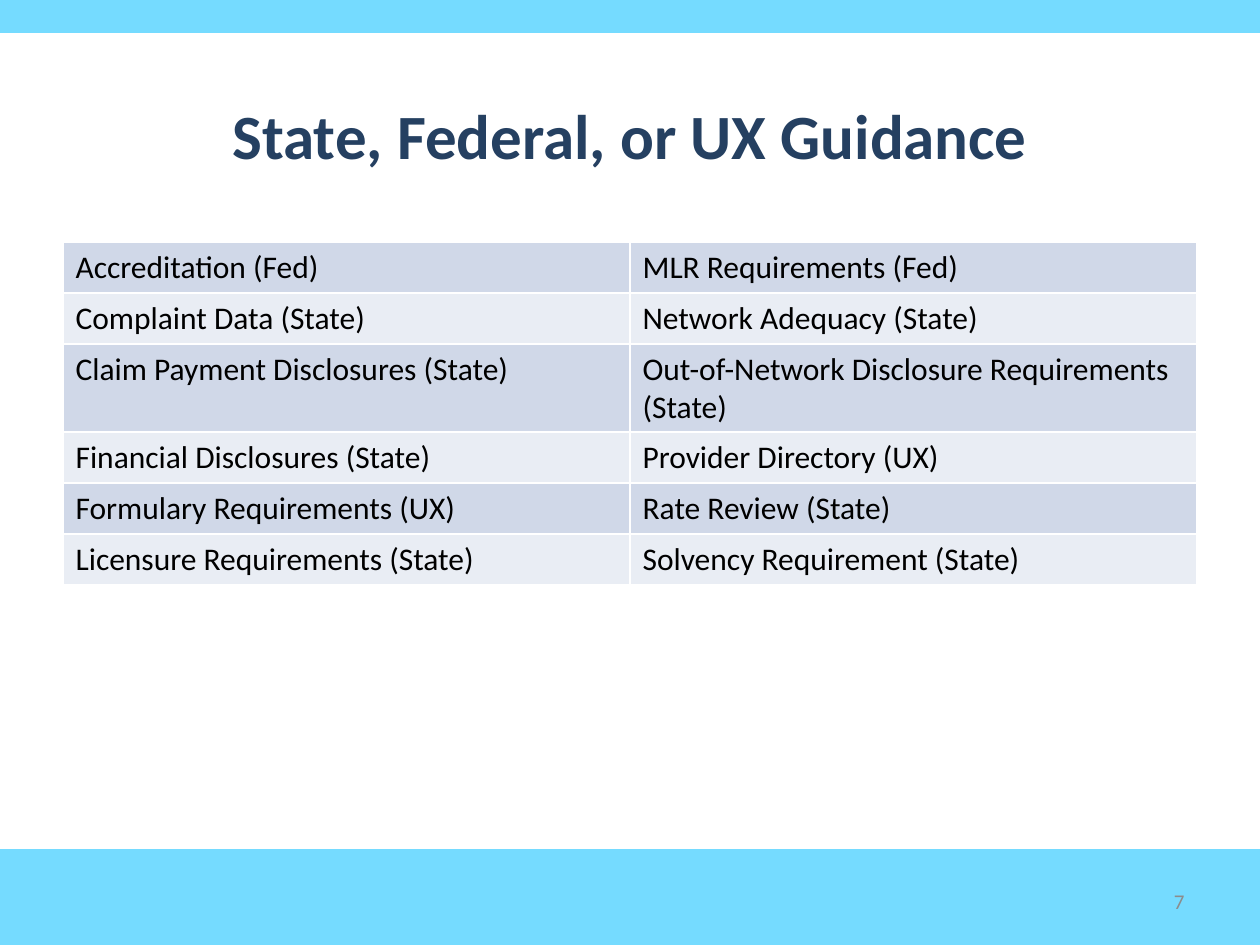
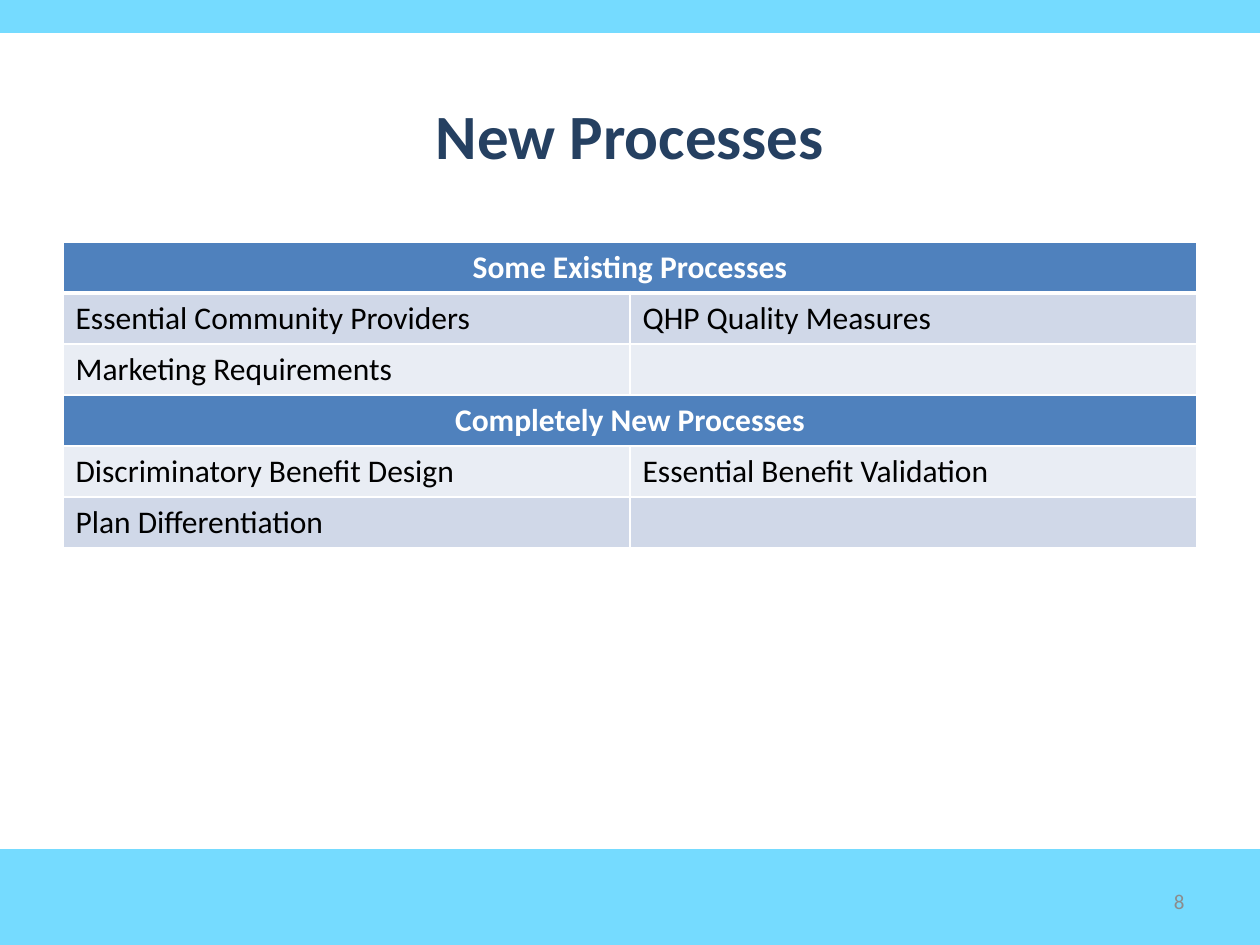
from lxml.etree import SubElement
from pptx import Presentation
from pptx.dml.color import RGBColor
from pptx.enum.shapes import MSO_SHAPE
from pptx.enum.text import MSO_ANCHOR, PP_ALIGN
from pptx.oxml.ns import qn
from pptx.util import Inches, Pt

# Shared style
FONT = "Calibri"
SKY, NAVY, BLUE, GREY = "75DBFF", "254061", "4F81BD", "8C8C8C"
BLACK, WHITE = "000000", "FFFFFF"
ROW_BANDS = ("D0D8E8", "E9EDF4")
TABLE_HEIGHT = 2.43

# Table rows: two entries make a plain row, one entry a heading across both columns
GUIDANCE = [
    ("Accreditation (Fed)", "MLR Requirements (Fed)"),
    ("Complaint Data (State)", "Network Adequacy (State)"),
    ("Claim Payment Disclosures (State)", "Out-of-Network Disclosure Requirements (State)"),
    ("Financial Disclosures (State)", "Provider Directory (UX)"),
    ("Formulary Requirements (UX)", "Rate Review (State)"),
    ("Licensure Requirements (State)", "Solvency Requirement (State)"),
]
PROCESSES = [
    ("Some Existing Processes",),
    ("Essential Community Providers", "QHP Quality Measures"),
    ("Marketing Requirements", ""),
    ("Completely New Processes",),
    ("Discriminatory Benefit Design", "Essential Benefit Validation"),
    ("Plan Differentiation", ""),
]


def rgb(hex_color):
    return RGBColor.from_string(hex_color)


def write(tf, text, size, color, bold=False, align=PP_ALIGN.LEFT):
    p = tf.paragraphs[0]
    p.alignment = align
    if not text:
        p.font.size = Pt(size)
        return
    r = p.add_run()
    r.text = text
    r.font.name, r.font.size, r.font.bold = FONT, Pt(size), bold
    r.font.color.rgb = rgb(color)


def add_band(s, top, height):
    sp = s.shapes.add_shape(MSO_SHAPE.RECTANGLE, 0, Inches(top), Inches(10), Inches(height))
    sp.shadow.inherit = False
    sp.fill.solid()
    sp.fill.fore_color.rgb = rgb(SKY)
    sp.line.color.rgb = rgb(SKY)
    sp.line.width = Pt(2)


def add_text(s, left, top, width, height, text, **style):
    tf = s.shapes.add_textbox(Inches(left), Inches(top), Inches(width), Inches(height)).text_frame
    tf.word_wrap = True
    tf.vertical_anchor = MSO_ANCHOR.MIDDLE
    write(tf, text, **style)


def set_borders(cell, bottom):
    tc_pr = cell._tc.get_or_add_tcPr()
    for side, width in (("L", 1), ("R", 1), ("T", 1), ("B", bottom)):
        ln = SubElement(tc_pr, qn(f"a:ln{side}"), w=str(Pt(width)))
        fill = SubElement(ln, qn("a:solidFill"))
        SubElement(fill, qn("a:srgbClr"), val=WHITE)


def add_grid(s, rows):
    table = s.shapes.add_table(len(rows), 2, Inches(0.5), Inches(1.92),
                               Inches(9), Inches(TABLE_HEIGHT)).table
    first_is_heading = len(rows[0]) == 1
    table.first_row = first_is_heading
    for i, row in enumerate(rows):
        heading = len(row) == 1
        # Banding starts below a heading in the first row
        color = BLUE if heading else ROW_BANDS[(i - first_is_heading) % 2]
        for cell in table.rows[i].cells:
            set_borders(cell, bottom=3 if heading and i == 0 else 1)
            cell.fill.solid()
            cell.fill.fore_color.rgb = rgb(color)
        if heading:
            table.cell(i, 0).merge(table.cell(i, 1))
        for j, text in enumerate(row):
            write(table.cell(i, j).text_frame, text, 18, WHITE if heading else BLACK, heading,
                  PP_ALIGN.CENTER if heading else PP_ALIGN.LEFT)


def add_slide(prs, title, rows, number):
    s = prs.slides.add_slide(prs.slide_layouts[6])
    add_band(s, 6.75, 0.75)
    add_band(s, 0, 0.25)
    add_text(s, 0.5, 0.3, 9, 1.53, title, size=36, color=NAVY, bold=True, align=PP_ALIGN.CENTER)
    add_grid(s, rows)
    add_text(s, 7.17, 6.95, 2.33, 0.4, str(number), size=12, color=GREY, align=PP_ALIGN.RIGHT)


def main():
    prs = Presentation()
    prs.slide_width, prs.slide_height = Inches(10), Inches(7.5)
    add_slide(prs, "State, Federal, or UX Guidance", GUIDANCE, 7)
    add_slide(prs, "New Processes", PROCESSES, 8)
    prs.save("out.pptx")


if __name__ == "__main__":
    main()
